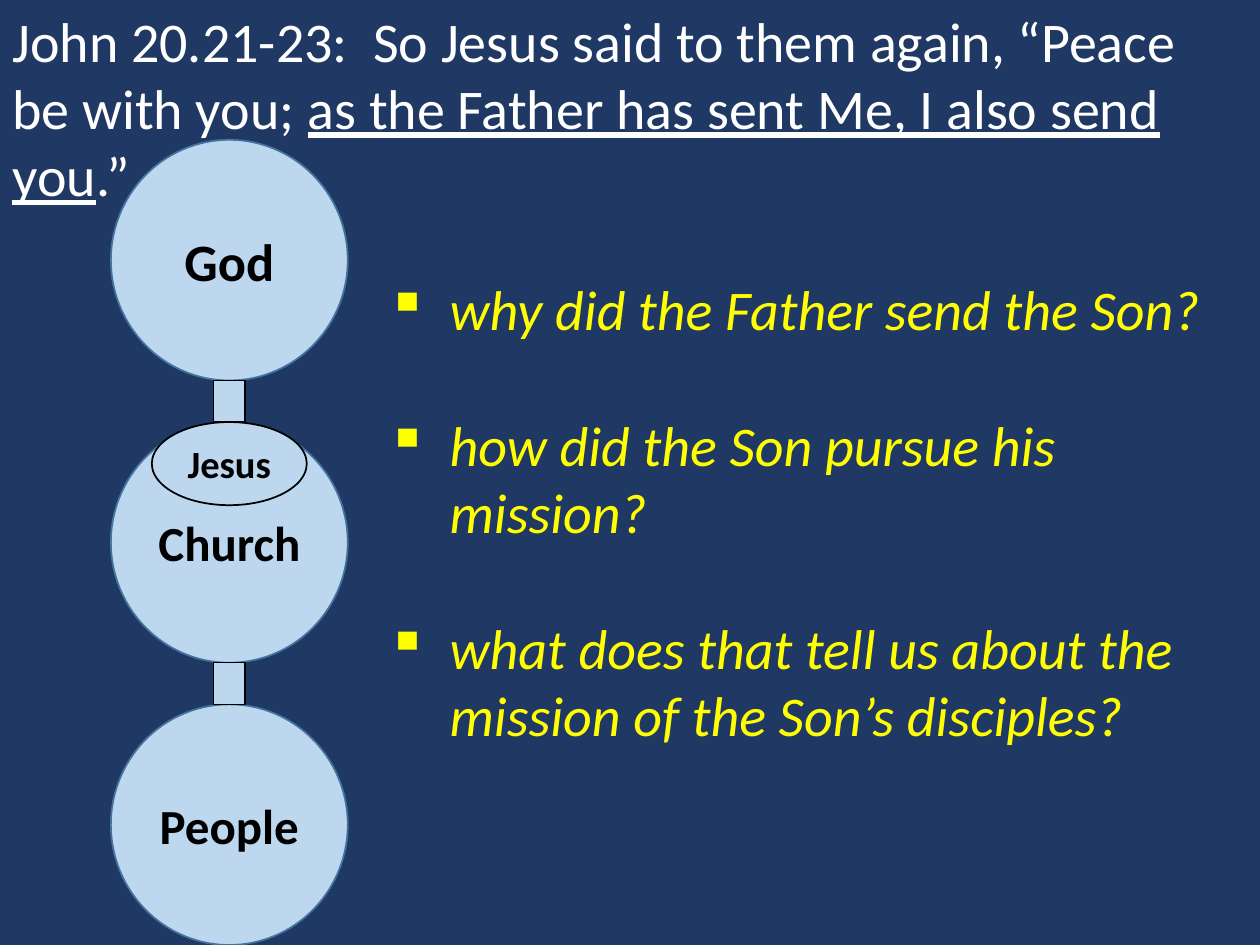
from lxml import etree
from pptx import Presentation
from pptx.dml.color import RGBColor
from pptx.enum.shapes import MSO_SHAPE
from pptx.enum.text import MSO_ANCHOR, MSO_AUTO_SIZE, PP_ALIGN
from pptx.oxml.ns import qn
from pptx.util import Inches, Pt

OVAL, RECT = MSO_SHAPE.OVAL, MSO_SHAPE.RECTANGLE
MIDDLE, CENTER = MSO_ANCHOR.MIDDLE, PP_ALIGN.CENTER
GROW = MSO_AUTO_SIZE.SHAPE_TO_FIT_TEXT

NAVY = RGBColor(0x20, 0x38, 0x64)
PALE = RGBColor(0xBD, 0xD7, 0xEE)
STEEL = RGBColor(0x43, 0x73, 0x9E)
BLACK = RGBColor(0, 0, 0)
WHITE = RGBColor(0xFF, 0xFF, 0xFF)
YELLOW = RGBColor(0xFF, 0xFF, 0)

VERSE = [
    ("John 20.21-23:  So Jesus said to them again, “Peace be with you; ", False),
    ("as the Father has sent Me, I also send you", True),
    (".”", False),
]
QUESTIONS = [
    "why did the Father send the Son?",
    "how did the Son pursue his mission?",
    "what does that tell us about the mission of the Son’s disciples?",
]
CIRCLES = [("God", 30), ("Church", 28), ("People", 28)]
JESUS = ("Jesus", 22)

AXIS, CHAIN_TOP = 1.82, 1.11
CIRCLE_W, CIRCLE_H = 1.88, 1.91
LINK_W, LINK_H = 0.25, 0.33
JESUS_W, JESUS_H = 1.23, 0.66
STEP = CIRCLE_H + LINK_H
LINE_GAP = 39


def add_run(p, text, size, color, **formats):
    r = p.add_run()
    r.text = text
    formats.update(name="Calibri", size=Pt(size))
    for key, value in formats.items():
        setattr(r.font, key, value)
    r.font.color.rgb = color


def add_text_box(s, left, top, width, height):
    tf = s.shapes.add_textbox(*map(Inches, (left, top, width, height))).text_frame
    tf.word_wrap = True
    tf.auto_size = GROW
    return tf


def add_part(group, kind, top, width, height, line, weight, label=None):
    box = (AXIS - width / 2, top, width, height)
    sp = group.shapes.add_shape(kind, *map(Inches, box))
    sp.shadow.inherit = False
    sp.fill.solid()
    sp.fill.fore_color.rgb = PALE
    sp.line.color.rgb = line
    sp.line.width = Pt(weight)
    if label:
        tf = sp.text_frame
        tf.vertical_anchor = MIDDLE
        p = tf.paragraphs[0]
        p.alignment = CENTER
        add_run(p, *label, BLACK, bold=True)


def add_bullet(p):
    pPr = p._p.get_or_add_pPr()
    pPr.set("marL", str(Inches(0.5)))
    pPr.set("indent", str(Inches(-0.5)))
    etree.SubElement(pPr, qn("a:buChar")).set("char", "▪")


prs = Presentation()
prs.slide_width, prs.slide_height = Inches(10), Inches(7.5)
s = prs.slides.add_slide(prs.slide_layouts[6])
s.background.fill.solid()
s.background.fill.fore_color.rgb = NAVY

p = add_text_box(s, 0, 0, 9.98, 1.72).paragraphs[0]
for text, underline in VERSE:
    add_run(p, text, 32, WHITE, underline=underline)

chain = s.shapes.add_group_shape()
tops = [CHAIN_TOP + i * STEP for i in range(len(CIRCLES))]
for top, label in zip(tops, CIRCLES):
    add_part(chain, OVAL, top, CIRCLE_W, CIRCLE_H, STEEL, 1, label)
add_part(chain, OVAL, tops[1], JESUS_W, JESUS_H, BLACK, 1, JESUS)
for top in tops[:-1]:
    add_part(chain, RECT, top + CIRCLE_H, LINK_W, LINK_H, BLACK, 0.75)

tf = add_text_box(s, 2.97, 1.59, 7.01, 4.41)
tf.margin_top = Inches(0.05) + Pt(LINE_GAP)
for i, question in enumerate(QUESTIONS):
    p = tf.add_paragraph() if i else tf.paragraphs[0]
    if i:
        p.space_before = Pt(LINE_GAP)
    add_bullet(p)
    add_run(p, question, 32, YELLOW, italic=True)

prs.save("out.pptx")
